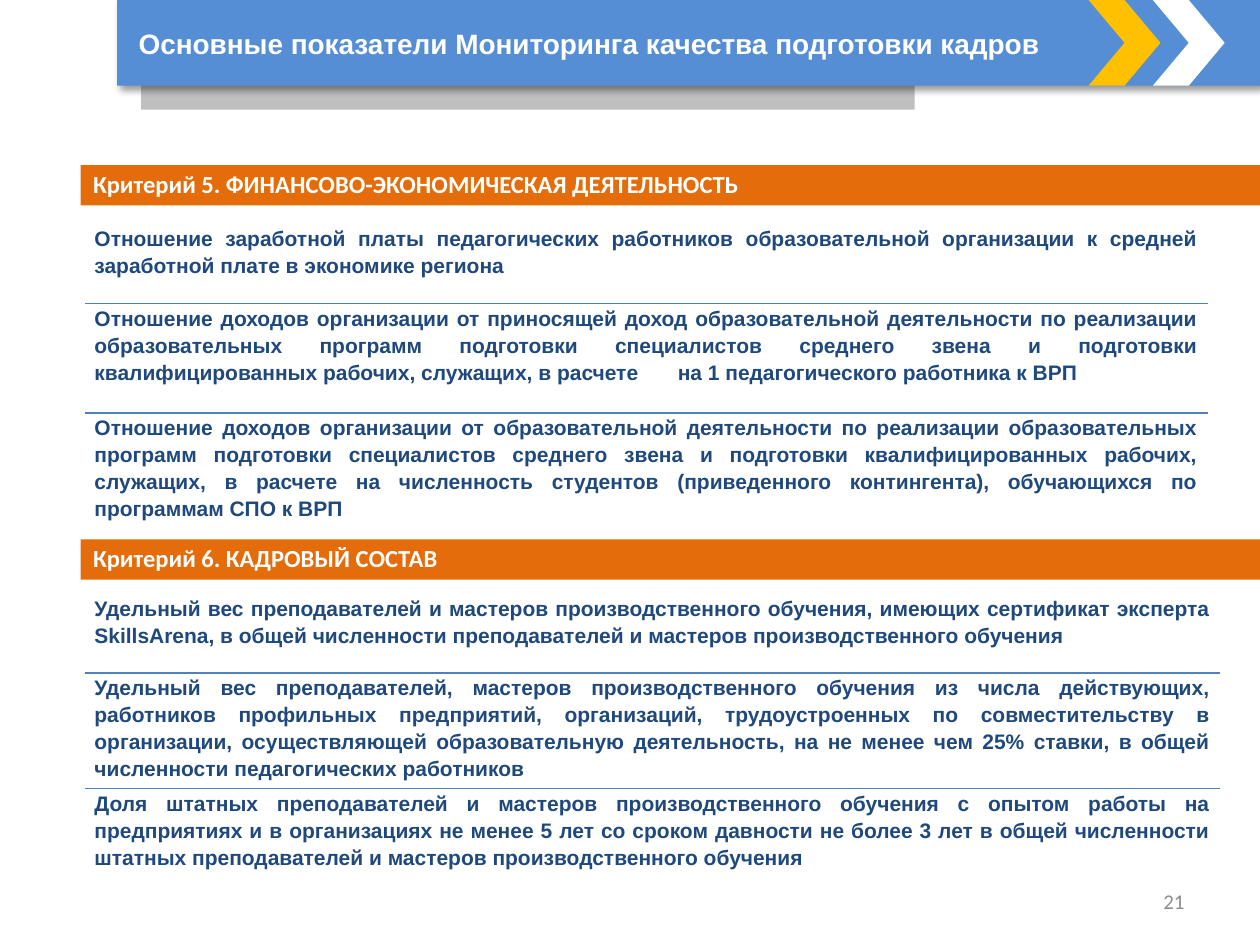
from lxml import etree
from pptx import Presentation, util as u
from pptx.dml.color import RGBColor
from pptx.enum import shapes, text
from pptx.oxml import parse_xml
from pptx.oxml.ns import nsdecls, qn

W, H = 10, 7.5
LEFT = 0.064 * W
BAR_H = 0.32
BAND_H = 0.68
BLUE, NAVY, ORANGE, WHITE = "4F81BD", "1F497D", "E46C0A", "FFFFFF"
GAP_TAB = 4.63

# heading, bar top, table top, table width, row heights, space after, rows
CRITERIA = [
    ("Критерий 5. ФИНАНСОВО-ЭКОНОМИЧЕСКАЯ ДЕЯТЕЛЬНОСТЬ",
     1.31, 1.78, 8.9, (0.63, 0.87, 0.92), (12, 6), (
         "Отношение заработной платы педагогических работников образовательной "
         "организации к средней заработной плате в экономике региона",
         "Отношение доходов организации от приносящей доход образовательной "
         "деятельности по реализации образовательных программ подготовки "
         "специалистов среднего звена и подготовки квалифицированных рабочих, "
         "служащих, в расчете\tна 1 педагогического работника к ВРП",
         "Отношение доходов организации от образовательной деятельности по "
         "реализации образовательных программ подготовки специалистов среднего "
         "звена и подготовки квалифицированных рабочих, служащих, в расчете на "
         "численность студентов (приведенного контингента), обучающихся по "
         "программам СПО к ВРП")),
    ("Критерий 6. КАДРОВЫЙ СОСТАВ",
     4.28, 4.71, 9, (0.63, 0.92, 0.76), (0, 0), (
         "Удельный вес преподавателей и мастеров производственного обучения, "
         "имеющих сертификат эксперта SkillsArena, в общей численности "
         "преподавателей и мастеров производственного обучения",
         "Удельный вес преподавателей, мастеров производственного обучения из "
         "числа действующих, работников профильных предприятий, организаций, "
         "трудоустроенных по совместительству в организации, осуществляющей "
         "образовательную деятельность, на не менее чем 25% ставки, в общей "
         "численности педагогических работников",
         "Доля штатных преподавателей и мастеров производственного обучения с "
         "опытом работы на предприятиях и в организациях не менее 5 лет со "
         "сроком давности не более 3 лет в общей численности штатных "
         "преподавателей и мастеров производственного обучения")),
]


def color(hex_):
    return RGBColor.from_string(hex_)


def box(*lengths):
    return [u.Inches(n) for n in lengths]


def write(tf, content, size, font, hex_, bold=True, align=text.PP_ALIGN.LEFT):
    tf.text = content
    tf.word_wrap = True
    p = tf.paragraphs[0]
    p.alignment = align
    for r in p.runs:
        r.font.size, r.font.name, r.font.bold = u.Pt(size), font, bold
        r.font.color.rgb = color(hex_)
    return p


def add_block(s, kind, at, fill):
    sp = s.shapes.add_shape(kind, *box(*at))
    sp.shadow.inherit = False
    sp.fill.solid()
    sp.fill.fore_color.rgb = color(fill)
    sp.line.fill.background()
    return sp


def add_drop_shadow(sp):
    effects = sp._element.spPr.find(qn("a:effectLst"))
    effects.append(parse_xml(
        f'<a:outerShdw {nsdecls("a")} blurRad="{u.Pt(4)}" dist="{u.Pt(3)}" '
        'dir="2700000" algn="tl" rotWithShape="0"><a:srgbClr val="000000">'
        '<a:alpha val="40000"/></a:srgbClr></a:outerShdw>'))


def add_header(s, title):
    rect, chevron = shapes.MSO_SHAPE.RECTANGLE, shapes.MSO_SHAPE.CHEVRON
    add_block(s, rect, (1.12, 0.44, 6.14, 0.43), "BFBFBF")
    add_drop_shadow(add_block(s, rect, (0.93, 0, W - 0.93, BAND_H), "558ED5"))

    sp = s.shapes.title
    sp.left, sp.top, sp.width, sp.height = box(1, 0, 7.67, BAND_H)
    write(sp.text_frame, title, 16, "Arial", WHITE)
    sp.text_frame.vertical_anchor = text.MSO_ANCHOR.MIDDLE
    sp.text_frame.auto_size = text.MSO_AUTO_SIZE.NONE
    sp.element.getparent().append(sp.element)  # in front of the band

    for x, fill in ((9.15, WHITE), (8.64, "FFC000")):
        add_block(s, chevron, (x, 0, 0.57, BAND_H), fill)


def add_criterion_bar(s, heading, top):
    sp = add_block(s, shapes.MSO_SHAPE.RECTANGLE,
                   (LEFT, top, W - LEFT, BAR_H), ORANGE)
    sp.text_frame.vertical_anchor = text.MSO_ANCHOR.MIDDLE
    write(sp.text_frame, heading, 14, "Calibri", WHITE).line_spacing = 0.95


def set_borders(cell, **sides):
    """Draw 1 pt cell borders; sides are given in schema order L, R, T, B."""
    for i, (side, hex_) in enumerate(sides.items()):
        cell._tc.get_or_add_tcPr().insert(i, parse_xml(
            f'<a:ln{side} {nsdecls("a")} w="{u.Pt(1)}"><a:solidFill>'
            f'<a:srgbClr val="{hex_}"/></a:solidFill></a:ln{side}>'))


def add_tab_stop(p, inches):
    tabs = etree.SubElement(p._p.get_or_add_pPr(), qn("a:tabLst"))
    etree.SubElement(tabs, qn("a:tab"), pos=str(u.Inches(inches)), algn="l")


def add_indicators(s, top, width, heights, spacing, rows):
    table = s.shapes.add_table(
        len(rows), 1, *box(0.68, top, width, sum(heights))).table
    table.first_row = table.horz_banding = False
    last = len(rows) - 1
    for i, (content, height) in enumerate(zip(rows, heights)):
        table.rows[i].height = u.Inches(height)
        cell = table.cell(i, 0)
        cell.margin_left = cell.margin_right = u.Inches(0.07)
        cell.margin_top = cell.margin_bottom = 0
        cell.fill.background()
        set_borders(cell, L=WHITE, R=WHITE, T=BLUE if i else WHITE,
                    B=BLUE if i < last else WHITE)
        p = write(cell.text_frame, content, 12, "Arial", NAVY,
                  align=text.PP_ALIGN.JUSTIFY)
        p.line_spacing = 1.15
        p.space_before, p.space_after = (u.Pt(n) for n in spacing)
        if "\t" in content:
            add_tab_stop(p, GAP_TAB)


def add_page_number(s, number):
    tf = s.shapes.add_textbox(*box(7.17, 6.95, 2.33, 0.4)).text_frame
    tf.vertical_anchor = text.MSO_ANCHOR.MIDDLE
    write(tf, number, 12, "Calibri", "8C8C8C", False, text.PP_ALIGN.RIGHT)


def main():
    prs = Presentation()
    prs.slide_width, prs.slide_height = box(W, H)
    s = prs.slides.add_slide(prs.slide_layouts[5])
    add_page_number(s, "21")
    for heading, bar_top, *indicators in CRITERIA:
        add_criterion_bar(s, heading, bar_top)
        add_indicators(s, *indicators)
    add_header(s, "Основные показатели Мониторинга качества подготовки кадров")
    prs.save("out.pptx")


if __name__ == "__main__":
    main()
